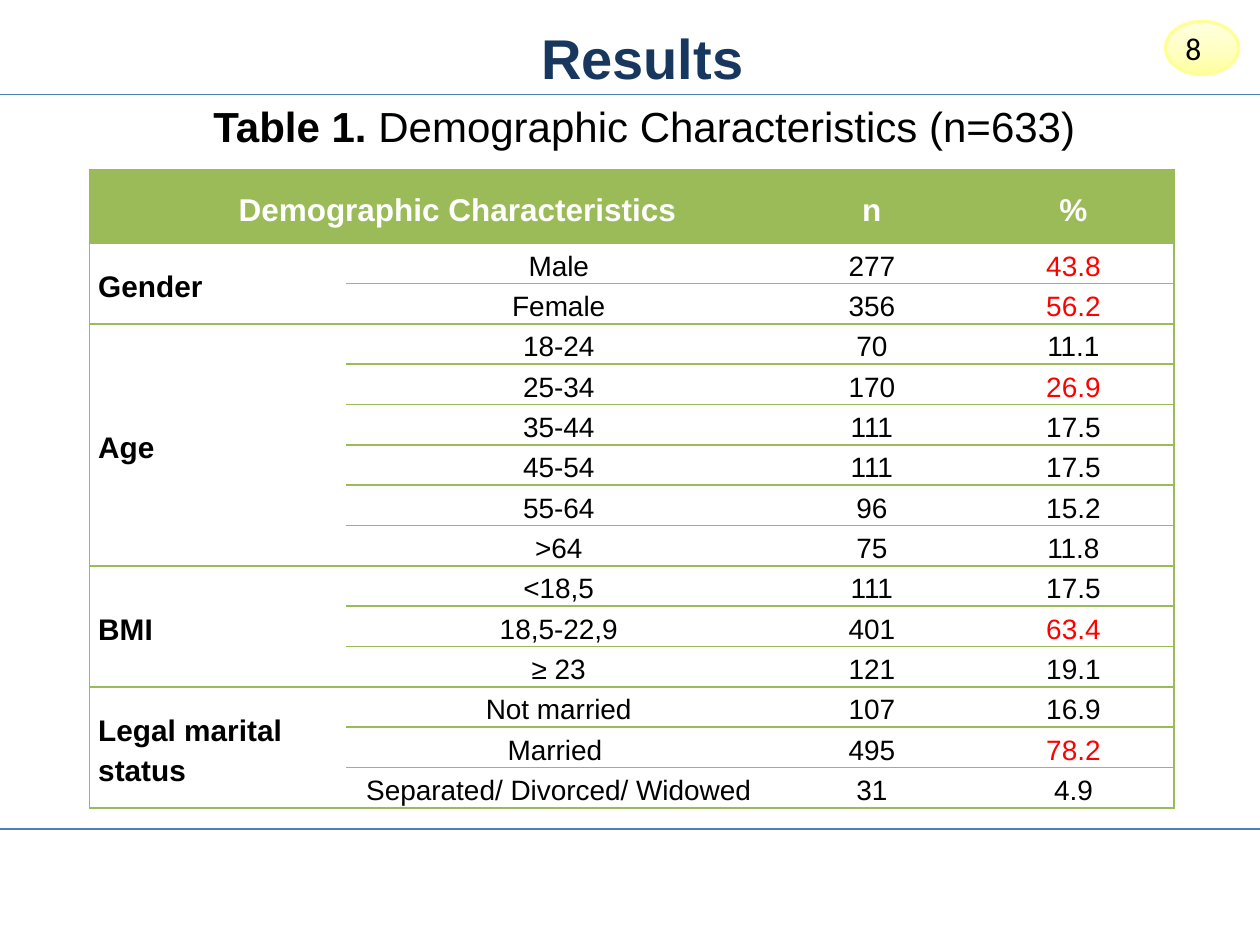
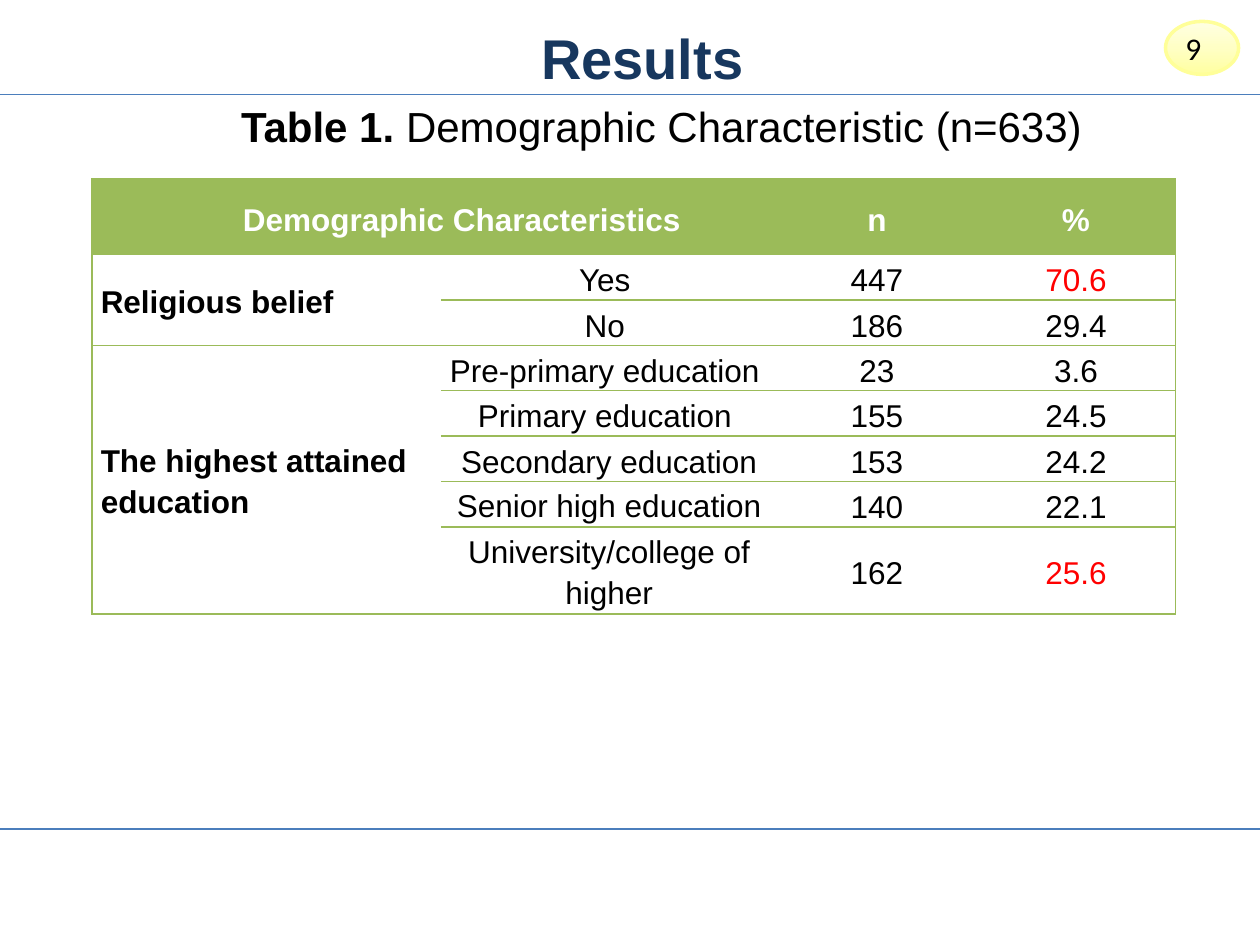
from copy import deepcopy
from dataclasses import dataclass

from lxml.etree import SubElement as Sub
from pptx import Presentation
from pptx.dml.color import RGBColor as Rgb
from pptx.enum.shapes import MSO_CONNECTOR as Link, MSO_SHAPE as Form
from pptx.enum.text import MSO_ANCHOR as Anchor, MSO_AUTO_SIZE as Fit, PP_ALIGN as Align
from pptx.oxml.ns import qn
from pptx.util import Inches, Pt


@dataclass(frozen=True)
class Theme:
    font: str = "Arial"
    page_font: str = "Calibri"
    navy: str = "17375E"
    rule: str = "4B7EBC"
    green: str = "9BBB59"
    white: str = "FFFFFF"
    black: str = "000000"
    red: str = "FF0000"
    rim: str = "FFFF99"
    glow: tuple = ("FFFFA0", "FFFFC5", "FFFFE3")
    title: int = 32
    caption: int = 24
    head: int = 18
    page: int = 18


T = Theme()
NO_GRID = "{2D5ABB26-0587-4C30-8999-92F81FD0307C}"


def color(code):
    return Rgb.from_string(code)


def box(left, top, width, height):
    return [Inches(v) for v in (left, top, width, height)]


def add_run(para, text, size, tint=T.black, bold=False, font=T.font):
    run = para.add_run()
    run.text = text
    run.font.name = font
    run.font.size = Pt(size)
    run.font.bold = bold
    run.font.color.rgb = color(tint)


def add_text(slide, place, runs, align=Align.LEFT):
    frame = slide.shapes.add_textbox(*box(*place)).text_frame
    frame.word_wrap = True
    para = frame.paragraphs[0]
    para.alignment = align
    for text, style in runs:
        add_run(para, text, **style)


def add_title(slide, text):
    title = slide.shapes.title
    title.left, title.top, title.width, title.height = box(1.64, 0.08, 7.04, 0.75)
    frame = title.text_frame
    frame.auto_size = Fit.NONE
    frame.vertical_anchor = Anchor.MIDDLE
    para = frame.paragraphs[0]
    para.alignment = Align.CENTER
    add_run(para, text, T.title, T.navy, True)


def add_rule(slide, top, width):
    y = Inches(top)
    rule = slide.shapes.add_connector(Link.STRAIGHT, 0, y, Inches(10), y)
    rule.line.color.rgb = color(T.rule)
    rule.line.width = Pt(width)
    Sub(rule._element.spPr, qn("a:effectLst"))


def add_badge(slide, page):
    badge = slide.shapes.add_shape(Form.OVAL, *box(9.25, 0.17, 0.58, 0.42))
    badge.shadow.inherit = False
    badge.line.color.rgb = color(T.rim)
    badge.line.width = Pt(2)
    fill = badge.fill
    fill.gradient()
    fill.gradient_angle = 90
    stops = badge._element.spPr.find(".//" + qn("a:gsLst"))
    stops.insert(1, deepcopy(stops[0]))
    for i, (stop, tint) in enumerate(zip(fill.gradient_stops, T.glow)):
        stop.position = i / 2
        stop.color.rgb = color(tint)
    add_text(slide, (9.31, 0.18, 0.53, 0.4),
             [(page, dict(size=T.page, font=T.page_font))])


def add_frame(slide, page):
    add_rule(slide, 0.75, 1)
    add_rule(slide, 6.58, 0.75)
    add_badge(slide, page)
    add_title(slide, "Results ")


def add_caption(slide, left, text):
    add_text(slide, (left, 0.75, 9.5, 0.91),
             [("Table 1.", dict(size=T.caption, bold=True)),
              (text, dict(size=T.caption))], Align.CENTER)


def set_edges(cell, sides):
    props = cell._tc.get_or_add_tcPr()
    for side in "LRTB":
        edge = Sub(props, qn("a:ln" + side), w=str(Pt(1)))
        if side in sides:
            fill = Sub(edge, qn("a:solidFill"))
            Sub(fill, qn("a:srgbClr"), val=T.green)
        else:
            Sub(edge, qn("a:noFill"))


def set_cell(cell, sides, fill, text="", tight=False, align=Align.CENTER, **style):
    set_edges(cell, sides)
    cell.fill.solid()
    cell.fill.fore_color.rgb = color(fill)
    cell.vertical_anchor = Anchor.MIDDLE
    cell.margin_left = cell.margin_right = Inches(0.07)
    cell.margin_top = cell.margin_bottom = 0
    para = cell.text_frame.paragraphs[0]
    para.alignment = align
    para.line_spacing = 1.15 if tight else 1.2
    para.space_before = Pt(0 if tight else 2)
    if text:
        add_run(para, text, **style)


def fill_head(table):
    heads = ("Demographic Characteristics ", "", "n", "%")
    for cell, text in zip(table.rows[0].cells, heads):
        set_cell(cell, "LRTB", T.green, text, size=T.head, tint=T.white, bold=True)
    first = table.cell(0, 0)
    first.merge(table.cell(0, 1))
    first.text_frame.paragraphs[0]._p.get_or_add_pPr().set("indent", str(Inches(0.5)))


def add_grid(slide, left, top, cols, rows, groups, red, label, body, tight=()):
    shape = slide.shapes.add_table(len(rows), len(cols),
                                   *box(left, top, sum(cols), sum(rows)))
    table = shape.table
    table.first_row = table.horz_banding = False
    table._tbl.tblPr.find(qn("a:tableStyleId")).text = NO_GRID
    for col, width in zip(table.columns, cols):
        col.width = Inches(width)
    for row, height in zip(table.rows, rows):
        row.height = Inches(height)
    fill_head(table)
    start = 1
    for name, lines in groups:
        for i, line in enumerate(lines, start):
            text, sides = (name, "LTB") if i == start else ("", "L")
            set_cell(table.cell(i, 0), sides, T.white, text, name in tight,
                     Align.LEFT, size=label, bold=True)
            for j, text in enumerate(line, 1):
                set_cell(table.cell(i, j), "TBR" if j == 3 else "TB", T.white, text,
                         text in tight, size=body,
                         tint=T.red if text in red else T.black)
        end = start + len(lines)
        table.cell(start, 0).merge(table.cell(end - 1, 0))
        start = end


PEOPLE = [
    ("Gender", [("Male", "277", "43.8"), ("Female", "356", "56.2")]),
    ("Age", [("18-24", "70", "11.1"), ("25-34", "170", "26.9"),
             ("35-44", "111", "17.5"), ("45-54", "111", "17.5"),
             ("55-64", "96", "15.2"), (">64", "75", "11.8")]),
    ("BMI", [("<18,5", "111", "17.5"), ("18,5-22,9", "401", "63.4"),
             ("≥ 23", "121", "19.1")]),
    ("Legal marital status", [("Not married", "107", "16.9"),
                              ("Married ", "495", "78.2"),
                              ("Separated/ Divorced/ Widowed", "31", "4.9")]),
]
FAITH = "Religious belief"
SCHOOL = "The highest attained education"
SENIOR = "Senior high education"
COLLEGE = "University/college of higher"
STUDY = [
    (FAITH, [("Yes ", "447", "70.6"), ("No ", "186", "29.4")]),
    (SCHOOL, [("Pre-primary education ", "23", "3.6"),
              ("Primary education ", "155", "24.5"),
              ("Secondary education", "153", "24.2"),
              (SENIOR, "140", "22.1"), (COLLEGE, "162", "25.6")]),
]


def main():
    deck = Presentation()
    deck.slide_width, deck.slide_height = Inches(10), Inches(7.5)
    plain = deck.slide_layouts[5]

    slide = deck.slides.add_slide(plain)
    add_frame(slide, "8")
    add_grid(slide, 0.71, 1.35, (2.04, 3.37, 1.6, 1.6), [0.58] + [0.32] * 14,
             PEOPLE, {"43.8", "56.2", "26.9", "63.4", "78.2"}, 17, 16)
    add_caption(slide, 0.41, " Demographic Characteristics (n=633) ")

    slide = deck.slides.add_slide(plain)
    add_frame(slide, "9")
    add_grid(slide, 0.73, 1.42, (2.77, 2.67, 1.58, 1.58), [0.6] + [0.36] * 6 + [0.69],
             STUDY, {"70.6", "25.6"}, 18, 18, {FAITH, SCHOOL, SENIOR, COLLEGE})
    add_caption(slide, 0.5, " Demographic Characteristic (n=633)")

    deck.save("out.pptx")


if __name__ == "__main__":
    main()
